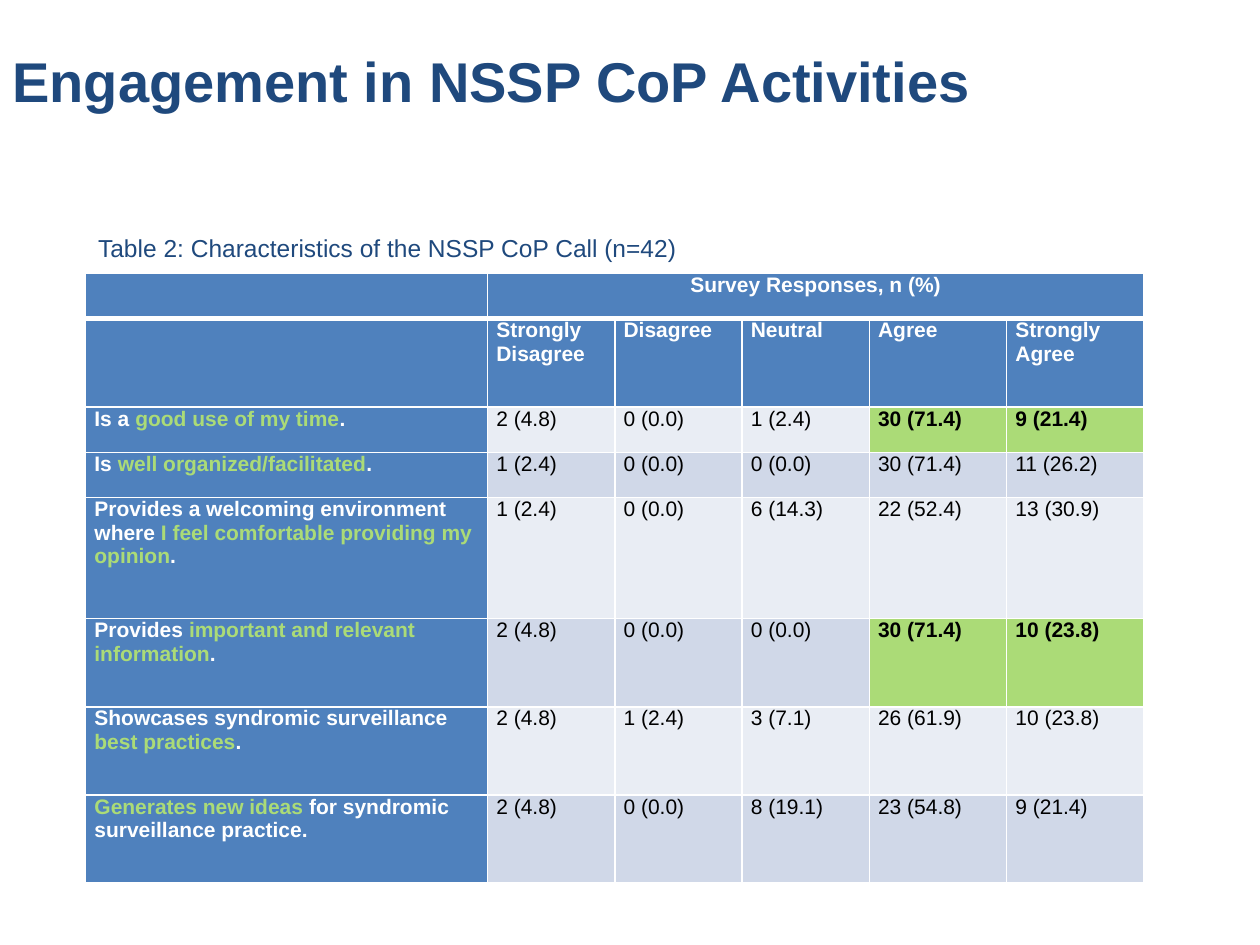
from pptx import Presentation
from pptx.dml.color import RGBColor
from pptx.enum.text import MSO_ANCHOR, PP_ALIGN
from pptx.oxml.ns import qn
from pptx.util import Inches, Pt
from lxml.etree import SubElement

COLORS = {
    "navy": "1F497D",
    "header": "4F81BD",
    "green": "ABDB77",
    "light": "E9EDF4",
    "dark": "D0D8E8",
    "white": "FFFFFF",
    "black": "000000",
}
COL_WIDTHS = [3.19, 1.01, 1.01, 1.01, 1.09, 1.09]
ROW_HEIGHTS = [0.36, 0.7, 0.36, 0.36, 0.96, 0.7, 0.7, 0.7]
RESPONSES = ["Strongly Disagree", "Disagree", "Neutral", "Agree", "Strongly Agree"]
# Asterisks enclose the highlighted phrase of each statement.
STATEMENTS = [
    ("Is a *good use of my time*.",
     ["2 (4.8)", "0 (0.0)", "1 (2.4)", "30 (71.4)", "9 (21.4)"]),
    ("Is *well organized/facilitated*.",
     ["1 (2.4)", "0 (0.0)", "0 (0.0)", "30 (71.4)", "11 (26.2)"]),
    ("Provides a welcoming environment where *I feel comfortable providing my opinion*.",
     ["1 (2.4)", "0 (0.0)", "6 (14.3)", "22 (52.4)", "13 (30.9)"]),
    ("Provides *important and relevant information*.",
     ["2 (4.8)", "0 (0.0)", "0 (0.0)", "30 (71.4)", "10 (23.8)"]),
    ("Showcases syndromic surveillance *best practices*.",
     ["2 (4.8)", "1 (2.4)", "3 (7.1)", "26 (61.9)", "10 (23.8)"]),
    ("*Generates new ideas *for syndromic surveillance practice.",
     ["2 (4.8)", "0 (0.0)", "8 (19.1)", "23 (54.8)", "9 (21.4)"]),
]
HIGHLIGHTED_ROWS = {0, 3}
AGREE_COLUMNS = {4, 5}


def rgb(name):
    return RGBColor.from_string(COLORS[name])


def add_run(p, text, color, size=12, bold=False):
    r = p.add_run()
    r.text = text
    r.font.color.rgb = rgb(color)
    for name, value in {"name": "Arial", "size": Pt(size), "bold": bold}.items():
        setattr(r.font, name, value)


def add_text(s, box, text, size, bold=False, anchor=MSO_ANCHOR.TOP):
    tf = s.shapes.add_textbox(*map(Inches, box)).text_frame
    for name, value in {"word_wrap": True, "vertical_anchor": anchor}.items():
        setattr(tf, name, value)
    add_run(tf.paragraphs[0], text, "navy", size, bold)


def set_borders(cell, widths):
    tcPr = cell._tc.get_or_add_tcPr()
    for side, width in zip("LRTB", widths):
        ln = SubElement(tcPr, qn(f"a:ln{side}"), w=str(Pt(width)))
        fill = SubElement(ln, qn("a:solidFill"))
        SubElement(fill, qn("a:srgbClr"), val=COLORS["white"])


def style_cell(cell, fill, borders=(1, 1, 1, 1)):
    margins = {"margin_left": 0.07, "margin_right": 0.07,
               "margin_top": 0, "margin_bottom": 0}
    for name, value in margins.items():
        setattr(cell, name, Inches(value))
    set_borders(cell, borders)
    cell.fill.solid()
    cell.fill.fore_color.rgb = rgb(fill)


def write_cell(cell, text, color="white", bold=True):
    p = cell.text_frame.paragraphs[0]
    for i, part in enumerate(text.split("*")):
        if part:
            add_run(p, part, "green" if i % 2 else color, bold=bold)


def add_header(table):
    for col in range(len(COL_WIDTHS)):
        style_cell(table.cell(0, col), "header", (1, 1, 1, 3))
        style_cell(table.cell(1, col), "header", (1, 1, 3, 1))
    title = table.cell(0, 1)
    title.merge(table.cell(0, 5))
    write_cell(title, "Survey Responses, n (%)")
    title.text_frame.paragraphs[0].alignment = PP_ALIGN.CENTER
    for col, response in enumerate(RESPONSES, 1):
        write_cell(table.cell(1, col), response)


def add_statement(table, index, statement, values):
    row = index + 2
    style_cell(table.cell(row, 0), "header")
    write_cell(table.cell(row, 0), statement)
    band = "dark" if index % 2 else "light"
    for col, value in enumerate(values, 1):
        strong = index in HIGHLIGHTED_ROWS and col in AGREE_COLUMNS
        style_cell(table.cell(row, col), "green" if strong else band)
        write_cell(table.cell(row, col), value, "black", strong)


def add_survey_table(s):
    box = (0.68, 2.17, sum(COL_WIDTHS), sum(ROW_HEIGHTS))
    table = s.shapes.add_table(len(ROW_HEIGHTS), len(COL_WIDTHS),
                               *map(Inches, box)).table
    for column, width in zip(table.columns, COL_WIDTHS):
        column.width = Inches(width)
    for row, height in zip(table.rows, ROW_HEIGHTS):
        row.height = Inches(height)
    add_header(table)
    for index, (statement, values) in enumerate(STATEMENTS):
        add_statement(table, index, statement, values)


def main():
    prs = Presentation()
    prs.slide_width, prs.slide_height = Inches(10), Inches(7.5)
    s = prs.slides.add_slide(prs.slide_layouts[6])
    add_text(s, (0, 0.02, 7.92, 1.23), "Engagement in NSSP CoP Activities",
             32, True, MSO_ANCHOR.MIDDLE)
    add_survey_table(s)
    add_text(s, (0.68, 1.8, 6.92, 0.34),
             "Table 2: Characteristics of the NSSP CoP Call (n=42)", 14)
    prs.save("out.pptx")


if __name__ == "__main__":
    main()
